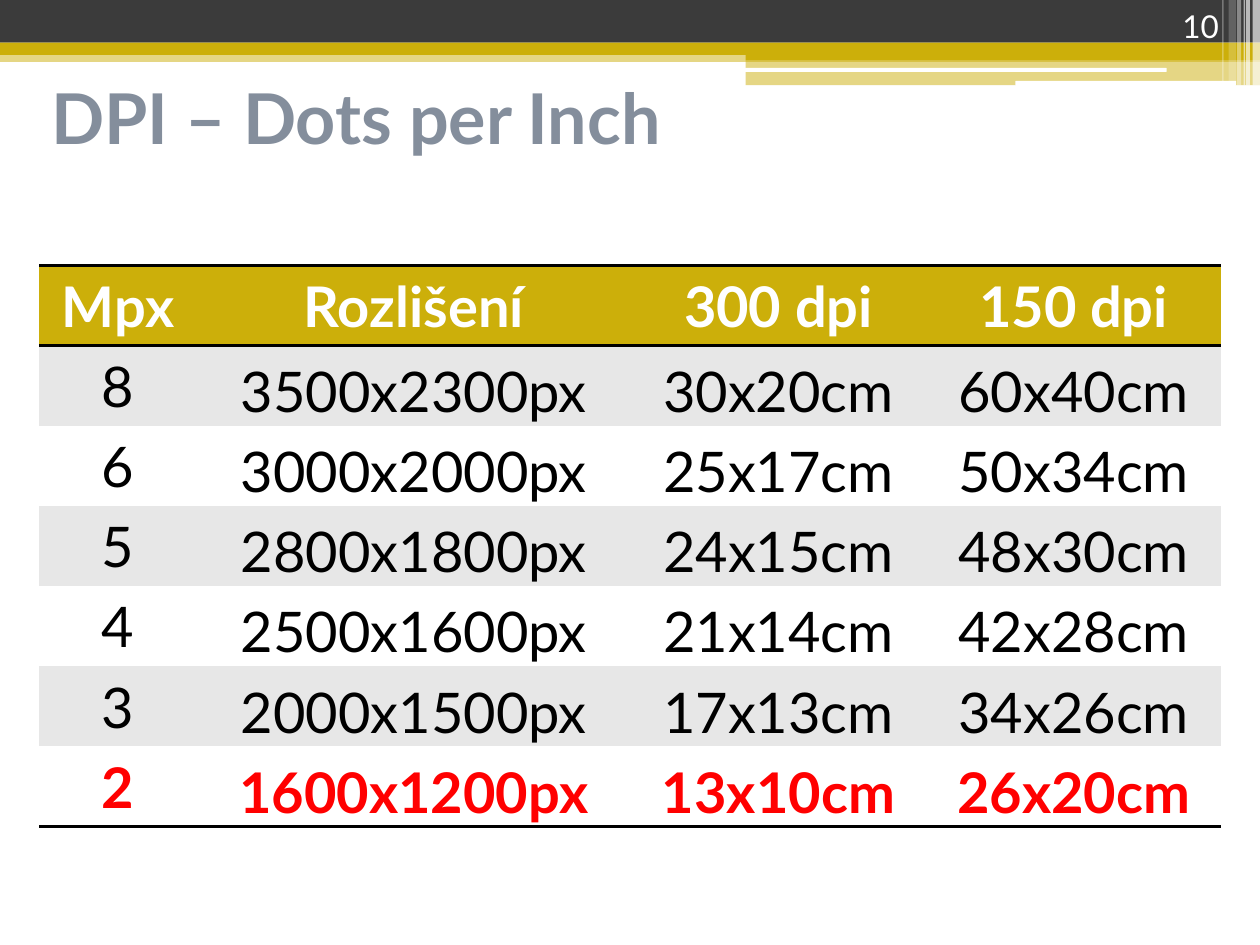
from dataclasses import dataclass

from pptx import Presentation
from pptx.dml.color import RGBColor
from pptx.enum.shapes import MSO_SHAPE
from pptx.enum.text import MSO_ANCHOR, PP_ALIGN
from pptx.oxml.ns import qn
from pptx.slide import Slide
from pptx.table import _Cell
from pptx.text.text import _Paragraph
from pptx.util import Cm, Pt
from lxml.etree import SubElement


@dataclass(frozen=True)
class Theme:
    font: str = "Lato"
    gold: str = "CCAF0A"
    dark: str = "3B3B3B"
    white: str = "FFFFFF"
    black: str = "000000"
    band: str = "E7E7E7"
    title: str = "848E9C"
    highlight: str = "FF0000"
    title_size: int = 40
    table_size: int = 32
    number_size: int = 18
    rule_width: int = 2


@dataclass(frozen=True)
class Bar:
    left: float
    top: float
    width: float
    height: float
    color: str
    opacity: int = 100
    rounded: bool = False


@dataclass(frozen=True)
class Label:
    text: str
    left: float
    top: float
    width: float
    height: float
    size: int
    color: str
    bold: bool
    align: PP_ALIGN
    anchor: MSO_ANCHOR


THEME = Theme()
SLIDE_WIDTH, SLIDE_HEIGHT = 25.4, 19.05
NO_STYLE = "{2D5ABB26-0587-4C30-8999-92F81FD0307C}"

# Header band, drawn from back to front
HEADER_BARS = [
    Bar(0, 1.02, SLIDE_WIDTH, 0.23, THEME.gold, 50),
    Bar(0, 0, SLIDE_WIDTH, 0.86, THEME.dark),
    Bar(0, 0.86, SLIDE_WIDTH, 0.25, THEME.gold),
    Bar(15.03, 0.99, 10.37, 0.23, THEME.gold),
    Bar(15.03, 1.22, 10.37, 0.5, THEME.gold, 50),
    Bar(15.01, 1.37, 8.51, 0.08, THEME.white, rounded=True),
    Bar(20.47, 1.63, 4.45, 0.1, THEME.white, rounded=True),
]

# Translucent stripes at the right edge: left, width, height, opacity
STRIPES = [
    Bar(left, 0, width, height, THEME.white, opacity)
    for left, width, height, opacity in [
        (25.25, 0.15, 1.73, 65),
        (25.12, 0.08, 1.73, 65),
        (25.07, 0.03, 1.73, 60),
        (24.94, 0.08, 1.73, 40),
        (24.77, 0.15, 1.63, 20),
        (24.64, 0.03, 1.63, 30),
    ]
]

LABELS = [
    Label("DPI – Dots per Inch", 0.79, 1.32, 23.57, 2.06, THEME.title_size,
          THEME.title, True, PP_ALIGN.LEFT, MSO_ANCHOR.MIDDLE),
    Label("10", 22.71, 0, 2.11, 1.02, THEME.number_size,
          THEME.white, False, PP_ALIGN.RIGHT, MSO_ANCHOR.BOTTOM),
]

TABLE_LEFT, TABLE_TOP, ROW_HEIGHT = 0.79, 5.36, 1.61
COLUMN_WIDTHS = [3.18, 8.75, 5.95, 5.95]
TABLE_ROWS = [
    ("Mpx", "Rozlišení", "300 dpi", "150 dpi"),
    ("8", "3500x2300px", "30x20cm", "60x40cm"),
    ("6", "3000x2000px", "25x17cm", "50x34cm"),
    ("5", "2800x1800px", "24x15cm", "48x30cm"),
    ("4", "2500x1600px", "21x14cm", "42x28cm"),
    ("3", "2000x1500px", "17x13cm", "34x26cm"),
    ("2", "1600x1200px", "13x10cm", "26x20cm"),
]


def add_bar(slide: Slide, bar: Bar) -> None:
    kind = MSO_SHAPE.ROUNDED_RECTANGLE if bar.rounded else MSO_SHAPE.RECTANGLE
    shape = slide.shapes.add_shape(
        kind, Cm(bar.left), Cm(bar.top), Cm(bar.width), Cm(bar.height))
    shape.shadow.inherit = False
    shape.line.fill.background()
    shape.fill.solid()
    shape.fill.fore_color.rgb = RGBColor.from_string(bar.color)
    if bar.opacity < 100:
        color = shape.element.spPr.find(qn("a:solidFill")).find(qn("a:srgbClr"))
        SubElement(color, qn("a:alpha"), val=str(bar.opacity * 1000))


def format_paragraph(paragraph: _Paragraph, size: int, color: str,
                     bold: bool, align: PP_ALIGN) -> None:
    paragraph.alignment = align
    for run in paragraph.runs:
        run.font.name = THEME.font
        run.font.size = Pt(size)
        run.font.bold = bold
        run.font.color.rgb = RGBColor.from_string(color)


def add_label(slide: Slide, label: Label) -> None:
    shape = slide.shapes.add_textbox(
        Cm(label.left), Cm(label.top), Cm(label.width), Cm(label.height))
    text_frame = shape.text_frame
    text_frame.word_wrap = True
    text_frame.vertical_anchor = label.anchor
    text_frame.text = label.text
    format_paragraph(text_frame.paragraphs[0], label.size, label.color,
                     label.bold, label.align)


def add_rule(cell: _Cell, side: str) -> None:
    properties = cell._tc.get_or_add_tcPr()
    line = SubElement(properties, qn(f"a:{side}"), w=str(Pt(THEME.rule_width)))
    fill = SubElement(line, qn("a:solidFill"))
    SubElement(fill, qn("a:srgbClr"), val=THEME.black)


def format_cell(cell: _Cell, text: str, row: int, column: int) -> None:
    is_header, is_last = row == 0, row == len(TABLE_ROWS) - 1
    # Rules come before the fill in the cell properties
    if is_header:
        add_rule(cell, "lnT")
    if is_header or is_last:
        add_rule(cell, "lnB")
    background, color = (THEME.band if row % 2 else THEME.white), THEME.black
    if is_header:
        background, color = THEME.gold, THEME.white
    elif is_last:
        color = THEME.highlight
    cell.fill.solid()
    cell.fill.fore_color.rgb = RGBColor.from_string(background)

    cell.vertical_anchor = MSO_ANCHOR.MIDDLE
    cell.text_frame.text = text
    paragraph = cell.text_frame.paragraphs[0]
    format_paragraph(paragraph, THEME.table_size, color,
                     is_header or is_last, PP_ALIGN.CENTER)
    if not is_header and column > 0:
        paragraph.line_spacing = 1.15
        cell.margin_left = cell.margin_right = Cm(0.18)
        cell.margin_top = cell.margin_bottom = Cm(0)


def add_resolution_table(slide: Slide) -> None:
    frame = slide.shapes.add_table(
        len(TABLE_ROWS), len(COLUMN_WIDTHS), Cm(TABLE_LEFT), Cm(TABLE_TOP),
        Cm(sum(COLUMN_WIDTHS)), Cm(ROW_HEIGHT * len(TABLE_ROWS)))
    for style in frame.element.iter(qn("a:tableStyleId")):
        style.text = NO_STYLE
    table = frame.table
    table.horz_banding = False
    for column, width in zip(table.columns, COLUMN_WIDTHS):
        column.width = Cm(width)
    for row, texts in enumerate(TABLE_ROWS):
        table.rows[row].height = Cm(ROW_HEIGHT)
        for column, text in enumerate(texts):
            format_cell(table.cell(row, column), text, row, column)


def main() -> None:
    presentation = Presentation()
    presentation.slide_width = Cm(SLIDE_WIDTH)
    presentation.slide_height = Cm(SLIDE_HEIGHT)
    slide = presentation.slides.add_slide(presentation.slide_layouts[6])
    for bar in HEADER_BARS + STRIPES:
        add_bar(slide, bar)
    add_resolution_table(slide)
    for label in LABELS:
        add_label(slide, label)
    presentation.save("out.pptx")


if __name__ == "__main__":
    main()
